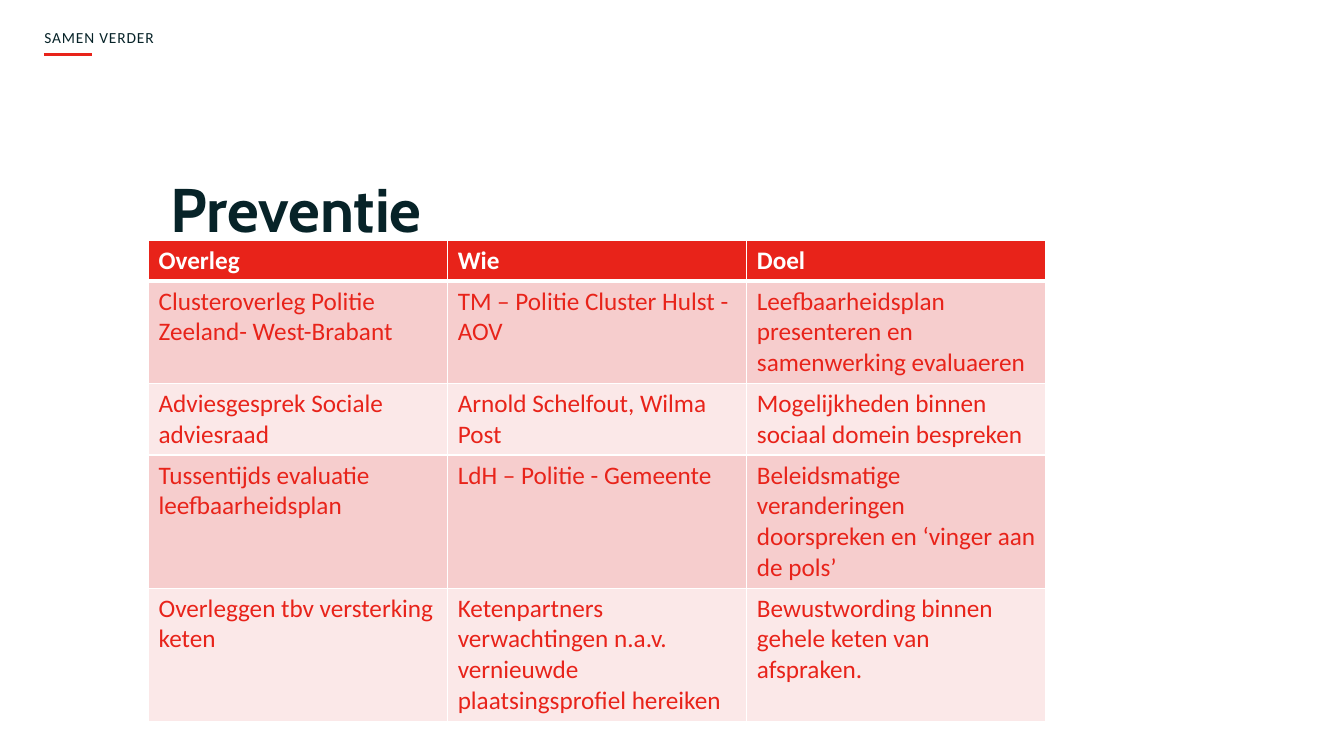
from lxml.etree import SubElement
from pptx import Presentation
from pptx.dml.color import RGBColor
from pptx.enum.shapes import MSO_CONNECTOR
from pptx.enum.text import MSO_ANCHOR, MSO_AUTO_SIZE, PP_ALIGN
from pptx.oxml.ns import qn
from pptx.util import Pt

COLORS = {"red": "E8231A", "dark": "072328", "white": "FFFFFF",
          "band": "F6CDCD", "light band": "FBE8E8"}


def add_run(paragraph, text, font, size, color, bold=False):
    run = paragraph.add_run()
    run.text = text
    run.font.name = font
    run.font.size = Pt(size)
    run.font.bold = bold
    run.font.color.rgb = RGBColor.from_string(COLORS[color])
    return run


def set_borders(cell, widths):
    properties = cell._tc.get_or_add_tcPr()
    for position, (side, width) in enumerate(widths.items()):
        border = properties.makeelement(qn(f"a:{side}"), {"w": str(Pt(width))})
        fill = SubElement(border, qn("a:solidFill"))
        SubElement(fill, qn("a:srgbClr"), val=COLORS["white"])
        properties.insert(position, border)


presentation = Presentation()
presentation.slide_width = Pt(960)
presentation.slide_height = Pt(540)
slide = presentation.slides.add_slide(presentation.slide_layouts[5])

# Red rule under the header
rule = slide.shapes.add_connector(MSO_CONNECTOR.STRAIGHT, Pt(31.3), Pt(39), Pt(66), Pt(39))
rule.line.color.rgb = RGBColor.from_string(COLORS["red"])
rule.line.width = Pt(2.5)
SubElement(rule._element.spPr, qn("a:effectLst"))

# Title
title = slide.shapes.title
title.left, title.top, title.width, title.height = Pt(107.3), Pt(103), Pt(725.8), Pt(76.3)
frame = title.text_frame
frame.auto_size = MSO_AUTO_SIZE.NONE
frame.word_wrap = True
frame.vertical_anchor = MSO_ANCHOR.BOTTOM
frame.margin_left = Pt(14.4)
paragraph = frame.paragraphs[0]
paragraph.alignment = PP_ALIGN.LEFT
paragraph.line_spacing = 0.9
add_run(paragraph, "Preventie", "Cabin", 44, "dark", True)

# Header text
header = slide.shapes.add_textbox(Pt(31.7), Pt(7.9), Pt(324), Pt(28.8))
frame = header.text_frame
frame.word_wrap = True
frame.vertical_anchor = MSO_ANCHOR.BOTTOM
frame.margin_left = 0
run = add_run(frame.paragraphs[0], "SAMEN VERDER", "Calibri", 11, "dark")
run.font._element.set("spc", "60")

# Table of meetings
rows = [
    ("Overleg", "Wie", "Doel"),
    ("Clusteroverleg Politie Zeeland- West-Brabant",
     "TM – Politie Cluster Hulst - AOV",
     "Leefbaarheidsplan presenteren en samenwerking evaluaeren"),
    ("Adviesgesprek Sociale adviesraad",
     "Arnold Schelfout, Wilma Post",
     "Mogelijkheden binnen sociaal domein bespreken"),
    ("Tussentijds evaluatie leefbaarheidsplan",
     "LdH – Politie - Gemeente",
     "Beleidsmatige veranderingen doorspreken en ‘vinger aan de pols’"),
    ("Overleggen tbv versterking keten",
     "Ketenpartners verwachtingen n.a.v. vernieuwde plaatsingsprofiel hereiken",
     "Bewustwording binnen gehele keten van afspraken."),
]
line_counts = [1, 3, 2, 4, 4]
table = slide.shapes.add_table(len(rows), 3, Pt(106.1), Pt(171.6), Pt(641.1), Pt(343.6)).table
for column in table.columns:
    column.width = Pt(213.7)
for row_index, texts in enumerate(rows):
    is_header = row_index == 0
    table.rows[row_index].height = Pt(7.2 + 21.97 * line_counts[row_index])
    fill_color = "red" if is_header else "band" if row_index % 2 else "light band"
    widths = {"lnL": 1, "lnR": 1,
              "lnT": 3 if row_index == 1 else 1, "lnB": 3 if is_header else 1}
    for column_index, text in enumerate(texts):
        cell = table.cell(row_index, column_index)
        cell.fill.solid()
        cell.fill.fore_color.rgb = RGBColor.from_string(COLORS[fill_color])
        set_borders(cell, widths)
        add_run(cell.text_frame.paragraphs[0], text, "Calibri", 18,
                "white" if is_header else "red", is_header)

presentation.save("out.pptx")
